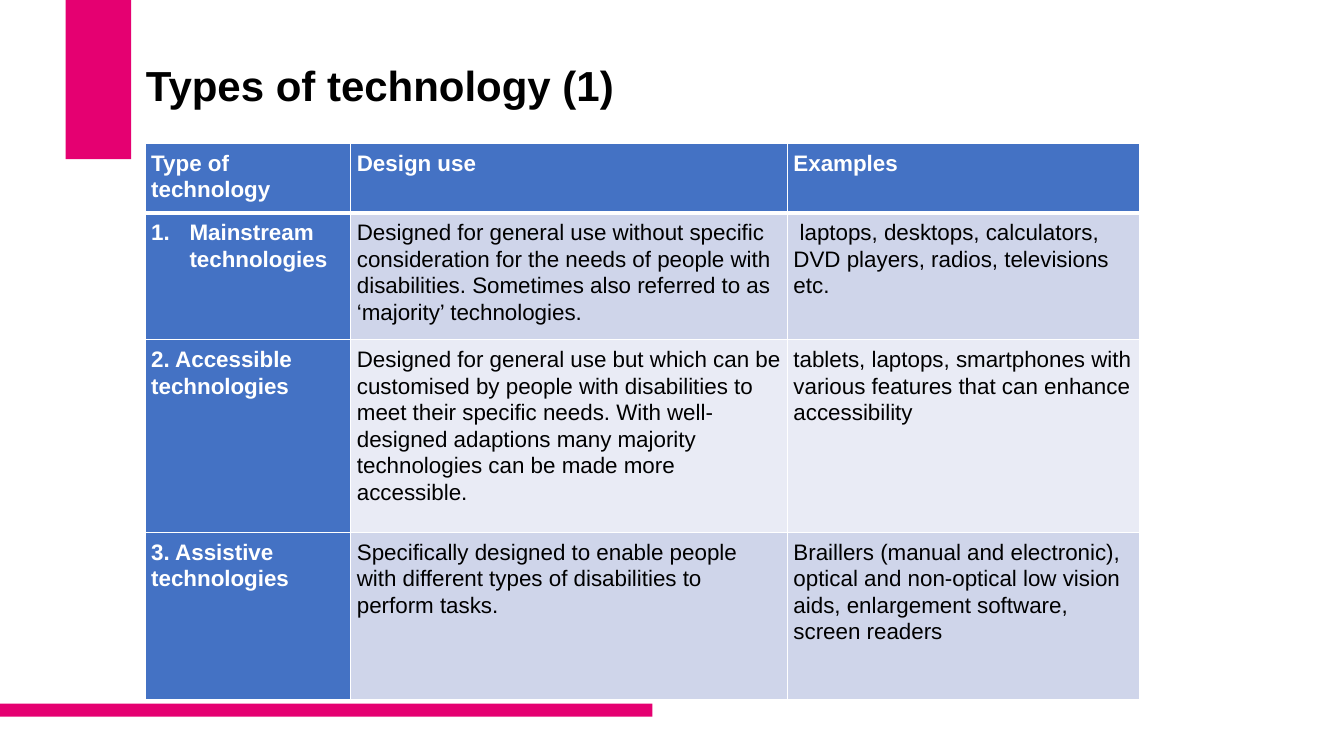
from lxml import etree
from pptx import Presentation
from pptx.dml.color import RGBColor
from pptx.enum.shapes import MSO_SHAPE
from pptx.enum.text import MSO_ANCHOR
from pptx.oxml.ns import qn
from pptx.util import Inches, Pt

RECT = MSO_SHAPE.RECTANGLE
MIDDLE, TOP = MSO_ANCHOR.MIDDLE, MSO_ANCHOR.TOP
PINK, BLUE, WHITE, BLACK = "E50071", "4472C4", "FFFFFF", "000000"
BANDS = ("CFD5EA", "E9EBF5")
COLS = (2.04, 4.33, 3.49)
HEIGHTS = (0.53, 1.11, 1.91, 1.66)
ROWS = (
    ("Type of technology", "Design use", "Examples"),
    ("Mainstream technologies",
     "Designed for general use without specific consideration for the needs "
     "of people with disabilities. Sometimes also referred to as ‘majority’ "
     "technologies.",
     " laptops, desktops, calculators, DVD players, radios, televisions etc."),
    ("2. Accessible technologies",
     "Designed for general use but which can be customised by people with "
     "disabilities to meet their specific needs. With well-designed adaptions "
     "many majority technologies can be made more accessible.",
     "tablets, laptops, smartphones with various features that can enhance "
     "accessibility"),
    ("3. Assistive technologies",
     "Specifically designed to enable people with different types of "
     "disabilities to perform tasks.",
     "Braillers (manual and electronic), optical and non-optical low vision "
     "aids, enlargement software, screen readers"),
)


def color(code):
    return RGBColor.from_string(code)


def write(frame, text, size=16, ink=BLACK, bold=False, line=1.07, after=8,
          number=False):
    para = frame.paragraphs[0]
    if number:
        props = para._p.get_or_add_pPr()
        props.set("marL", str(Inches(0.38)))
        props.set("indent", str(Inches(-0.38)))
        etree.SubElement(props, qn("a:buAutoNum"), type="arabicPeriod")
    para.line_spacing = line
    para.space_after = Pt(after)
    run = para.add_run()
    run.text = text
    font = run.font
    font.name, font.size, font.bold = "Arial", Pt(size), bold
    font.color.rgb = color(ink)


def edge(cell, side, width):
    """Draw one white border; borders must come before the cell's fill."""
    line = etree.SubElement(cell._tc.get_or_add_tcPr(), qn("a:ln" + side),
                            w=str(Pt(width)))
    fill = etree.SubElement(line, qn("a:solidFill"))
    etree.SubElement(fill, qn("a:srgbClr"), val=WHITE)


def bar(slide, left, top, width, height):
    shape = slide.shapes.add_shape(RECT, *map(Inches, (left, top, width, height)))
    shape.shadow.inherit = False
    shape.fill.solid()
    shape.fill.fore_color.rgb = color(PINK)
    shape.line.fill.background()


def title(slide, left, top, width, height):
    box = slide.shapes.add_textbox(*map(Inches, (left, top, width, height)))
    frame = box.text_frame
    frame.word_wrap = True
    frame.vertical_anchor = MIDDLE
    write(frame, "Types of technology (1)", size=30, bold=True, line=0.9, after=0)


def grid(slide, left, top):
    table = slide.shapes.add_table(
        len(ROWS), len(COLS), Inches(left), Inches(top),
        Inches(sum(COLS)), Inches(sum(HEIGHTS))).table
    for col, width in zip(table.columns, COLS):
        col.width = Inches(width)
    for r, texts in enumerate(ROWS):
        table.rows[r].height = Inches(HEIGHTS[r])
        for c, text in enumerate(texts):
            cell = table.cell(r, c)
            head = r == 0 or c == 0
            cell.margin_left = cell.margin_right = Inches(0.06)
            cell.margin_top = cell.margin_bottom = Inches(0.06)
            cell.vertical_anchor = TOP
            for side in "LRTB":
                thick = (r, side) in ((0, "B"), (1, "T"))
                edge(cell, side, 3 if thick else 1)
            cell.fill.solid()
            cell.fill.fore_color.rgb = color(BLUE if head else BANDS[(r - 1) % 2])
            write(cell.text_frame, text, ink=WHITE if head else BLACK,
                  bold=head, number=(r, c) == (1, 0))


def main():
    deck = Presentation()
    deck.slide_width, deck.slide_height = Inches(13.33), Inches(7.5)
    slide = deck.slides.add_slide(deck.slide_layouts[6])
    bar(slide, 0.65, 0, 0.65, 1.58)
    bar(slide, 0, 6.98, 6.47, 0.13)
    title(slide, 1.35, 0.15, 9.6, 1.45)
    grid(slide, 1.44, 1.42)
    deck.save("out.pptx")


if __name__ == "__main__":
    main()
